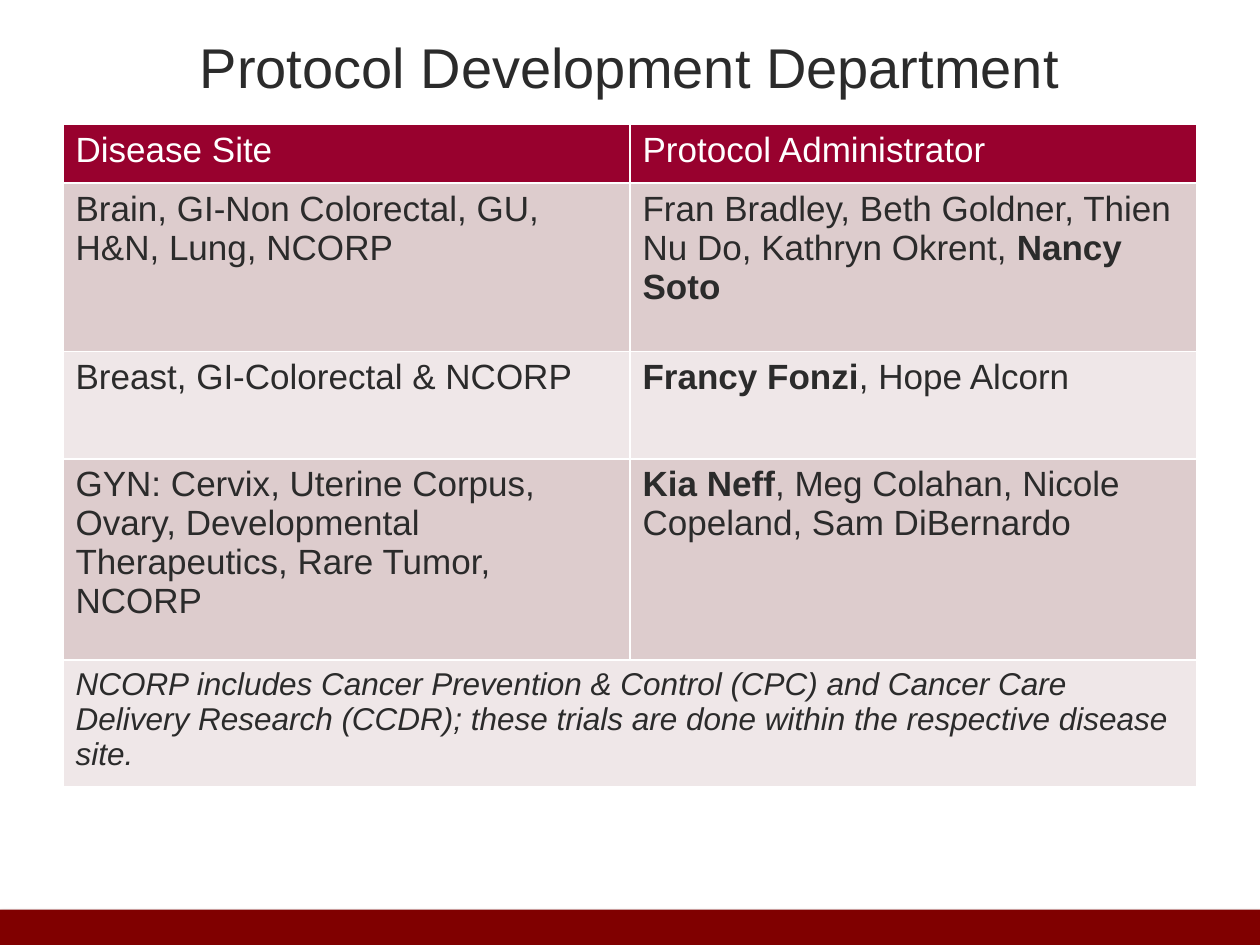
from lxml.etree import SubElement
from pptx import Presentation
from pptx.dml.color import RGBColor
from pptx.enum.shapes import MSO_SHAPE as Shape
from pptx.enum.text import MSO_ANCHOR as Anchor, PP_ALIGN as Align
from pptx.oxml.ns import qn
from pptx.util import Cm, Pt

INK = RGBColor(0x2B, 0x2B, 0x2B)
WHITE = RGBColor(0xFF, 0xFF, 0xFF)
CRIMSON = RGBColor(0x98, 0x01, 0x2E)
ROSE = RGBColor(0xDD, 0xCC, 0xCD)
PALE_ROSE = RGBColor(0xEF, 0xE7, 0xE8)
MAROON = RGBColor(0x80, 0x00, 0x00)

BODY = {"name": "Arial", "size": Pt(20), "bold": False, "italic": False}
TITLE = {**BODY, "size": Pt(32)}
NOTE = {**BODY, "size": Pt(18), "italic": True}

# Each cell is a list of (text, bold) runs
ROWS = [
    [[("Disease Site", False)], [("Protocol Administrator", False)]],
    [[("Brain, GI-Non Colorectal, GU, H&N, Lung, NCORP", False)],
     [("Fran Bradley, Beth Goldner, Thien Nu Do, Kathryn Okrent, ", False),
      ("Nancy Soto", True)]],
    [[("Breast, GI-Colorectal & NCORP", False)],
     [("Francy Fonzi", True), (", Hope Alcorn", False)]],
    [[("GYN: Cervix, Uterine Corpus, Ovary, Developmental Therapeutics, "
       "Rare Tumor, NCORP", False)],
     [("Kia Neff", True),
      (", Meg Colahan, Nicole Copeland, Sam DiBernardo", False)]],
    [[("NCORP includes Cancer Prevention & Control (CPC) and Cancer Care "
       "Delivery Research (CCDR); these trials are done within the "
       "respective disease site.", False)], []],
]
ROW_HEIGHTS = [1.18, 3.4, 2.16, 4.06, 2.38]


def add_run(paragraph, text, style, color):
    run = paragraph.add_run()
    run.text = text
    for name, value in style.items():
        setattr(run.font, name, value)
    run.font.color.rgb = color


def add_title(slide, text):
    box = slide.shapes.add_textbox(Cm(1.27), Cm(0.48), Cm(22.86), Cm(1.7))
    frame = box.text_frame
    frame.word_wrap = True
    frame.vertical_anchor = Anchor.MIDDLE
    paragraph = frame.paragraphs[0]
    paragraph.alignment = Align.CENTER
    add_run(paragraph, text, TITLE, INK)


def add_footer_bar(slide):
    bar = slide.shapes.add_shape(
        Shape.RECTANGLE, Cm(0), Cm(18.34), Cm(25.4), Cm(0.71))
    bar.fill.solid()
    bar.fill.fore_color.rgb = MAROON
    bar.line.fill.background()
    bar.shadow.inherit = False
    # Soft shadow straight below
    effects = bar.element.spPr.find(qn("a:effectLst"))
    shadow = SubElement(effects, qn("a:outerShdw"), blurRad=str(Pt(3.1)),
                        dist=str(Pt(1.8)), dir="5400000", rotWithShape="0")
    color = SubElement(shadow, qn("a:srgbClr"), val="000000")
    SubElement(color, qn("a:alpha"), val="35000")


def format_cell(cell, fill_color):
    properties = cell._tc.get_or_add_tcPr()
    for side in ("lnL", "lnR", "lnT", "lnB"):
        line = SubElement(properties, qn(f"a:{side}"), w=str(Pt(1)))
        fill = SubElement(line, qn("a:solidFill"))
        SubElement(fill, qn("a:srgbClr"), val=str(WHITE))
    cell.fill.solid()
    cell.fill.fore_color.rgb = fill_color


def add_site_table(slide):
    last = len(ROWS) - 1
    table = slide.shapes.add_table(
        len(ROWS), 2, Cm(1.27), Cm(2.51), Cm(22.86),
        Cm(sum(ROW_HEIGHTS))).table
    for row, height in zip(table.rows, ROW_HEIGHTS):
        row.height = Cm(height)
    table.cell(last, 0).merge(table.cell(last, 1))

    for row_index, row in enumerate(ROWS):
        header = row_index == 0
        band = ROSE if row_index % 2 else PALE_ROSE
        style = NOTE if row_index == last else BODY
        for column_index, runs in enumerate(row):
            cell = table.cell(row_index, column_index)
            format_cell(cell, CRIMSON if header else band)
            for text, bold in runs:
                add_run(cell.text_frame.paragraphs[0], text,
                        {**style, "bold": bold}, WHITE if header else INK)


def main():
    presentation = Presentation()
    presentation.slide_width = Cm(25.4)
    presentation.slide_height = Cm(19.05)
    slide = presentation.slides.add_slide(presentation.slide_layouts[6])

    add_footer_bar(slide)
    add_title(slide, "Protocol Development Department")
    add_site_table(slide)

    presentation.save("out.pptx")


if __name__ == "__main__":
    main()
